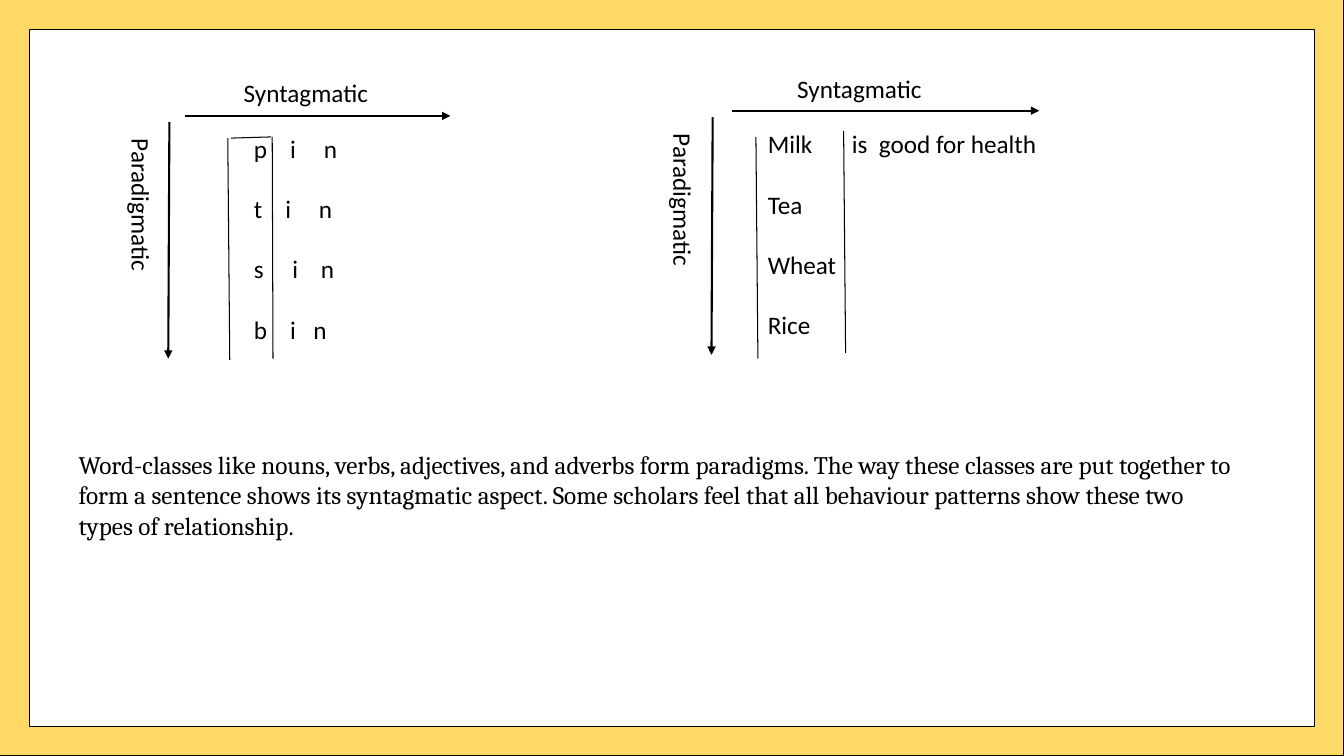
from dataclasses import dataclass

from lxml.etree import SubElement
from pptx import Presentation
from pptx.dml.color import RGBColor
from pptx.enum.shapes import MSO_CONNECTOR, MSO_SHAPE
from pptx.oxml.ns import qn
from pptx.util import Cm, Pt

BLACK = "000000"
GOLD = "FFD966"


@dataclass(frozen=True)
class Row:
    text: str
    tabs: tuple[float, ...] = ()


@dataclass(frozen=True)
class Rule:
    start: tuple[float, float]
    end: tuple[float, float]
    arrow: bool = False


@dataclass(frozen=True)
class Chart:
    """One diagram: its two axis labels, its word rows and its lines."""
    top: tuple[float, float, float, float]
    side: tuple[float, float, float, float]
    body: tuple[float, float, float, float]
    rows: tuple[Row, ...]
    rules: tuple[Rule, ...]


SOUNDS = Chart(
    top=(5.89, 1.83, 4.37, 1.02),
    side=(1.47, 4.83, 4.19, 1.02),
    body=(6.15, 3.23, 4.37, 5.64),
    rows=(
        Row("p\ti\tn", (0.91, 1.76)),
        Row("t\ti\tn", (0.79, 1.64)),
        Row("s\ti\tn", (0.97, 1.69)),
        Row("b\ti\tn", (0.91, 1.5)),
    ),
    rules=(
        Rule((4.67, 2.92), (11.35, 2.92), arrow=True),
        Rule((4.27, 3.07), (4.24, 9.04), arrow=True),
        Rule((6.86, 3.45), (6.88, 9.04)),
        Rule((5.74, 3.48), (5.79, 9.07)),
        Rule((5.82, 3.48), (6.83, 3.45)),
    ),
)
WORDS = Chart(
    top=(19.84, 1.73, 5.08, 1.02),
    side=(15.04, 4.62, 4.19, 1.19),
    body=(19.1, 3.12, 8.64, 5.64),
    rows=(
        Row("Milk\tis\tgood for health", (2.12, 2.8)),
        Row("Tea"),
        Row("Wheat"),
        Row("Rice"),
    ),
    rules=(
        Rule((18.44, 2.79), (26.19, 2.79), arrow=True),
        Rule((17.96, 2.95), (17.93, 8.94), arrow=True),
        Rule((21.26, 3.3), (21.31, 8.89)),
        Rule((19.05, 3.45), (19.1, 9.04)),
    ),
)
NOTE = (
    "Word-classes like nouns, verbs, adjectives, and adverbs form paradigms. "
    "The way these classes are put together to form a sentence shows its "
    "syntagmatic aspect. Some scholars feel that all behaviour patterns show "
    "these two types of relationship."
)


def color(code: str) -> RGBColor:
    return RGBColor.from_string(code)


def add_text(slide, box: tuple[float, ...], *rows: Row, font: str = "Calibri",
             size: float = 18, turn: float = 0, gap: float = 0) -> None:
    shape = slide.shapes.add_textbox(*map(Cm, box))
    shape.rotation = turn
    frame = shape.text_frame
    frame.word_wrap = True
    for index, row in enumerate(rows):
        para = frame.add_paragraph() if index else frame.paragraphs[0]
        para.space_before = Pt(gap if index else 0)
        run = para.add_run()
        run.text = row.text
        run.font.name = font
        run.font.size = Pt(size)
        run.font.color.rgb = color(BLACK)
        if row.tabs:
            stops = SubElement(para._p.get_or_add_pPr(), qn("a:tabLst"))
            for stop in row.tabs:
                SubElement(stops, qn("a:tab"), pos=str(Cm(stop)), algn="l")


def add_rule(slide, rule: Rule) -> None:
    line = slide.shapes.add_connector(
        MSO_CONNECTOR.STRAIGHT, *map(Cm, rule.start + rule.end))
    line.line.color.rgb = color(BLACK)
    line.line.width = Pt(1.5 if rule.arrow else 0.75)
    if rule.arrow:
        SubElement(line.line._get_or_add_ln(), qn("a:tailEnd"), type="triangle")
    SubElement(line._element.spPr, qn("a:effectLst"))


def add_chart(slide, chart: Chart) -> None:
    add_text(slide, chart.top, Row("Syntagmatic"))
    add_text(slide, chart.side, Row("Paradigmatic"), turn=90)
    add_text(slide, chart.body, *chart.rows, gap=21.5)
    for rule in chart.rules:
        add_rule(slide, rule)


def add_border(slide, width: int, height: int) -> None:
    border = slide.shapes.add_shape(MSO_SHAPE.FRAME, 0, 0, width, height)
    border.adjustments[0] = 0.039
    border.shadow.inherit = False
    border.fill.solid()
    border.fill.fore_color.rgb = color(GOLD)
    border.line.color.rgb = color(BLACK)
    border.line.width = Pt(0.75)


def main() -> None:
    deck = Presentation()
    deck.slide_width, deck.slide_height = Cm(33.87), Cm(19.05)
    slide = deck.slides.add_slide(deck.slide_layouts[6])
    add_border(slide, deck.slide_width, deck.slide_height)
    for chart in (SOUNDS, WORDS):
        add_chart(slide, chart)
    add_text(slide, (1.73, 11.2, 29.67, 4.11), Row(NOTE), font="Cambria")
    deck.save("out.pptx")


if __name__ == "__main__":
    main()
